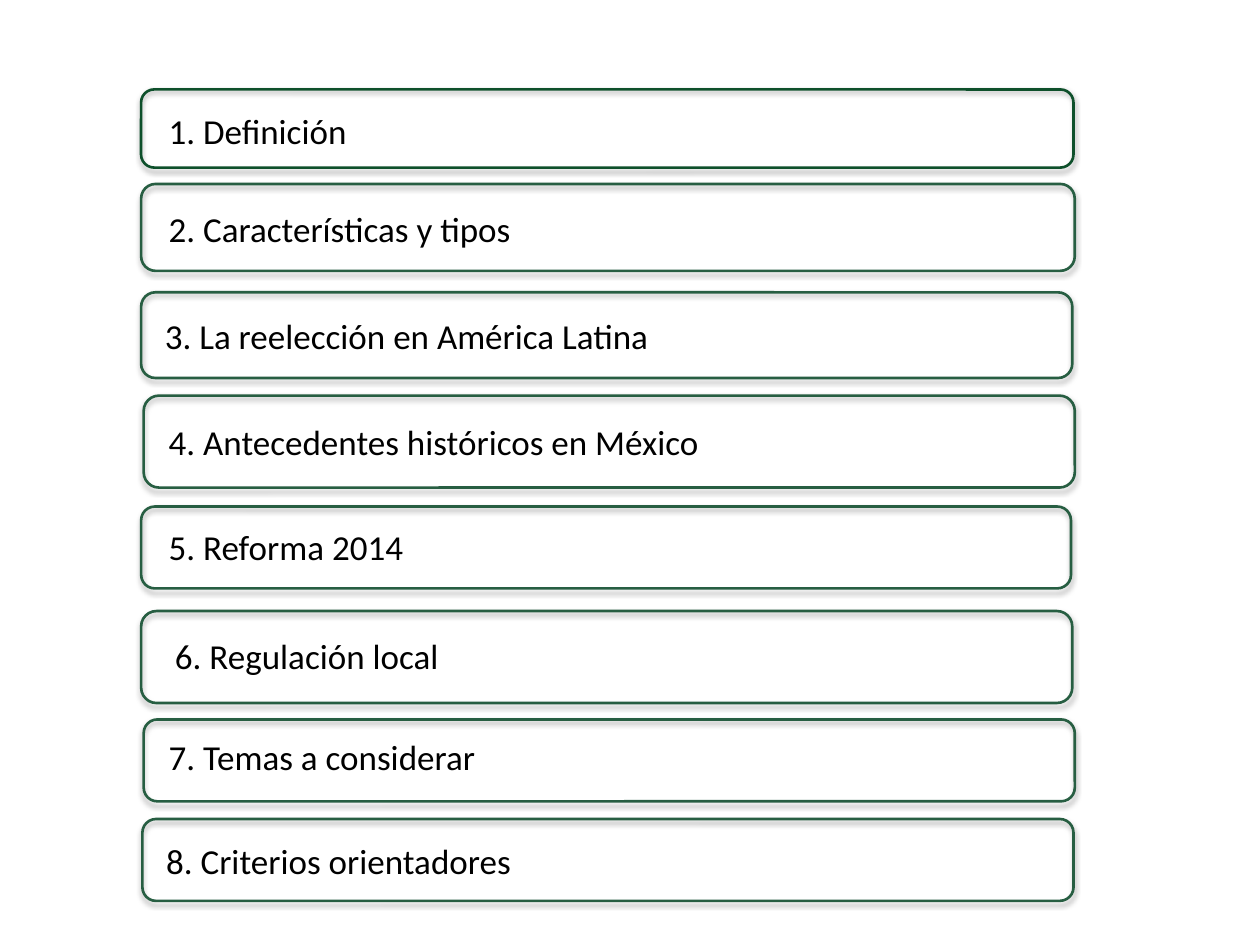
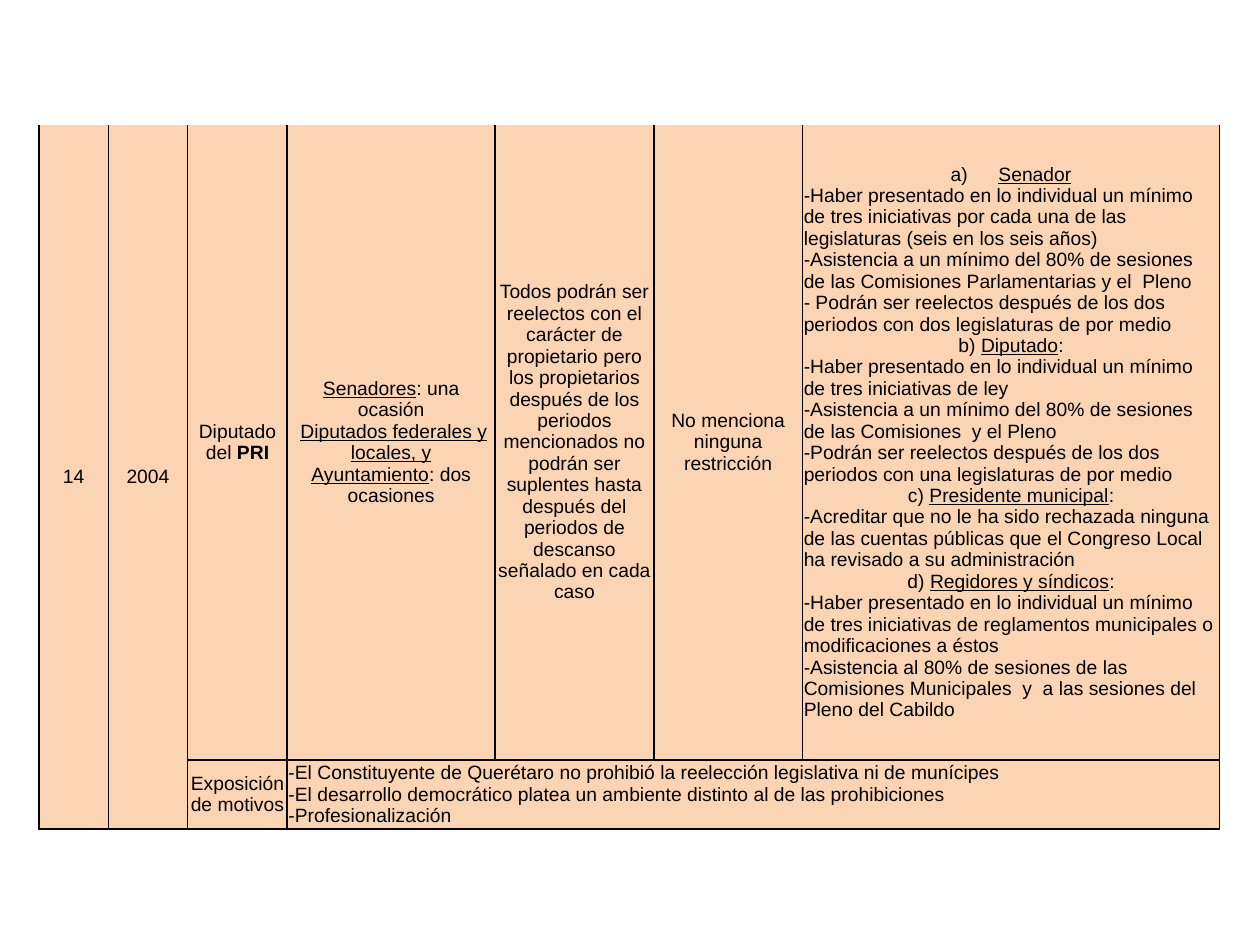
from lxml.etree import SubElement
from pptx import Presentation
from pptx.dml.color import RGBColor
from pptx.enum.shapes import MSO_SHAPE
from pptx.enum.text import MSO_ANCHOR, MSO_AUTO_SIZE, PP_ALIGN
from pptx.oxml import parse_xml
from pptx.oxml.ns import nsdecls, qn
from pptx.util import Inches, Pt

COLORS = {"text": "000000", "first": "0E502B", "green": "275E42", "peach": "FBD4B4"}
CENTER, LEFT, JUSTIFY = PP_ALIGN.CENTER, PP_ALIGN.LEFT, PP_ALIGN.JUSTIFY
BLANK = 6

TOPICS = [
    ("1. Definición", (1.12, 0.71, 7.4, 0.62), (1.24, 0.82, 7.16), True),
    ("2. Características y tipos", (1.12, 1.46, 7.41, 0.69), (1.24, 1.6, 5.85), True),
    ("3. La reelección en América Latina", (1.12, 2.32, 7.39, 0.68), (1.21, 2.45, 4.09), False),
    ("4. Antecedentes históricos en México", (1.14, 3.14, 7.39, 0.73), (1.24, 3.29, 6.39), True),
    ("5. Reforma 2014", (1.12, 4.02, 7.38, 0.65), (1.24, 4.12, 2.09), False),
    ("6. Regulación local", (1.12, 4.85, 7.39, 0.73), (1.29, 4.99, 2.32), False),
    ("7. Temas a considerar", (1.14, 5.71, 7.39, 0.65), (1.24, 5.79, 2.69), False),
    ("8. Criterios orientadores", (1.13, 6.5, 7.39, 0.65), (1.22, 6.61, 2.98), False),
]

COL_WIDTHS = [0.55, 0.63, 0.79, 1.65, 1.26, 1.18, 3.31]
ROW_HEIGHTS = [5.04, 0.27]

PROPOSAL = [
    ["14"],
    ["2004"],
    ["Diputado del *PRI*"],
    ["_Senadores_: una ocasión",
     " _Diputados federales y locales, y Ayuntamiento_: dos ocasiones"],
    ["Todos podrán ser reelectos con el carácter de propietario pero los propietarios "
     "después de los periodos mencionados no podrán ser suplentes hasta después del "
     "periodos de descanso señalado en cada caso"],
    ["No menciona ninguna restricción"],
]

REQUIREMENTS = [
    ("_Senador_", [
        "-Haber presentado en lo individual un mínimo de tres iniciativas por cada una de "
        "las legislaturas (seis en los seis años)",
        "-Asistencia a un mínimo del 80% de sesiones de las Comisiones Parlamentarias y el  Pleno",
        "- Podrán ser reelectos después de los dos periodos con dos legislaturas de por medio"]),
    ("b) _Diputado_:", [
        "-Haber presentado en lo individual un mínimo de tres iniciativas de ley",
        "-Asistencia a un mínimo del 80% de sesiones de las Comisiones  y el Pleno",
        "-Podrán ser reelectos después de los dos periodos con una legislaturas de por medio"]),
    ("c) _Presidente municipal_:", [
        "-Acreditar que no le ha sido rechazada ninguna de las cuentas públicas que el "
        "Congreso Local ha revisado a su administración"]),
    ("d) _Regidores y síndicos_:", [
        "-Haber presentado en lo individual un mínimo de tres iniciativas de reglamentos "
        "municipales o modificaciones a éstos",
        "-Asistencia al 80% de sesiones de las Comisiones Municipales  y  a las sesiones "
        "del Pleno del Cabildo"]),
]

MOTIVES = [
    "-El Constituyente de Querétaro no prohibió la reelección legislativa ni de munícipes",
    "-El desarrollo democrático platea un ambiente distinto al de las prohibiciones",
    "-Profesionalización",
]


def rgb(name):
    return RGBColor.from_string(COLORS[name])


def write(tf, text, size=11, font="Arial", align=CENTER, hanging=False, numbered=False):
    p = tf.add_paragraph() if tf.text else tf.paragraphs[0]
    p.alignment = align
    if hanging:
        pPr = p._p.get_or_add_pPr()
        pPr.set("marL", str(Inches(0.38)))
        pPr.set("indent", str(-Inches(0.38)))
        if numbered:
            SubElement(pPr, qn("a:buFont"), typeface="+mj-lt")
            SubElement(pPr, qn("a:buAutoNum"), type="alphaLcParenR")
    for i, chunk in enumerate(text.split("_")):
        for j, part in enumerate(chunk.split("*")):
            if not part:
                continue
            r = p.add_run()
            r.text = part
            r.font.size = Pt(size)
            r.font.name = font
            r.font.bold = j % 2 == 1
            r.font.underline = i % 2 == 1
            r.font.color.rgb = rgb("text")


def add_frame(s, box, color):
    sp = s.shapes.add_shape(MSO_SHAPE.ROUNDED_RECTANGLE, *map(Inches, box))
    sp.fill.background()
    sp.line.color.rgb = rgb(color)
    sp.line.width = Pt(1.5)
    sp._element.spPr.append(parse_xml(
        f'<a:effectLst {nsdecls("a")}><a:outerShdw blurRad="{Pt(3.1)}" dist="{Pt(1.8)}" '
        'dir="5400000" rotWithShape="0"><a:srgbClr val="000000"><a:alpha val="35000"/>'
        '</a:srgbClr></a:outerShdw></a:effectLst>'))


def add_label(s, text, left, top, width, wrap, hanging):
    sp = s.shapes.add_textbox(*map(Inches, (left, top, width, 0.44)))
    tf = sp.text_frame
    tf.word_wrap = wrap
    tf.auto_size = MSO_AUTO_SIZE.SHAPE_TO_FIT_TEXT
    write(tf, text, size=20, font="Calibri", align=JUSTIFY, hanging=hanging)


def set_borders(cell, sides):
    tcPr = cell._tc.get_or_add_tcPr()
    for i, side in enumerate("LRTB"):
        paint = ('<a:solidFill><a:srgbClr val="000000"/></a:solidFill>'
                 if side in sides else "<a:noFill/>")
        tcPr.insert(i, parse_xml(f'<a:ln{side} {nsdecls("a")} w="{Pt(1)}">{paint}</a:ln{side}>'))


def format_cell(cell, sides):
    cell.fill.solid()
    cell.fill.fore_color.rgb = rgb("peach")
    cell.vertical_anchor = MSO_ANCHOR.MIDDLE
    cell.margin_left = cell.margin_right = Inches(0.01)
    cell.margin_top = cell.margin_bottom = 0
    set_borders(cell, sides)


def add_grid(s, left, top):
    size = (sum(COL_WIDTHS), sum(ROW_HEIGHTS))
    table = s.shapes.add_table(len(ROW_HEIGHTS), len(COL_WIDTHS),
                               *map(Inches, (left, top, *size))).table
    table.first_row = table.horz_banding = False
    for col, width in zip(table.columns, COL_WIDTHS):
        col.width = Inches(width)
    for row, height in zip(table.rows, ROW_HEIGHTS):
        row.height = Inches(height)
    for i in range(len(ROW_HEIGHTS)):
        for j in range(len(COL_WIDTHS)):
            format_cell(table.cell(i, j), "LRTB" if i and j > 1 else "LRB")
    for j in (0, 1):
        table.cell(0, j).merge(table.cell(1, j))
    table.cell(1, 3).merge(table.cell(1, 6))
    return table


def build_topics(prs):
    s = prs.slides.add_slide(prs.slide_layouts[BLANK])
    for i, (text, frame, label, wrap) in enumerate(TOPICS):
        add_frame(s, frame, "green" if i else "first")
        add_label(s, text, *label, wrap, hanging=i < 3)


def build_proposal(prs):
    s = prs.slides.add_slide(prs.slide_layouts[BLANK])
    table = add_grid(s, 0.31, 0.99)
    for j, paragraphs in enumerate(PROPOSAL):
        for text in paragraphs:
            write(table.cell(0, j).text_frame, text)
    tf = table.cell(0, 6).text_frame
    for i, (office, rules) in enumerate(REQUIREMENTS):
        write(tf, office, hanging=i == 0, numbered=i == 0)
        for rule in rules:
            write(tf, rule, align=LEFT)
    write(table.cell(1, 2).text_frame, "Exposición de motivos")
    for motive in MOTIVES:
        write(table.cell(1, 3).text_frame, motive, align=JUSTIFY)


def main():
    prs = Presentation()
    prs.slide_width, prs.slide_height = Inches(10), Inches(7.5)
    build_topics(prs)
    build_proposal(prs)
    prs.save("out.pptx")


if __name__ == "__main__":
    main()
